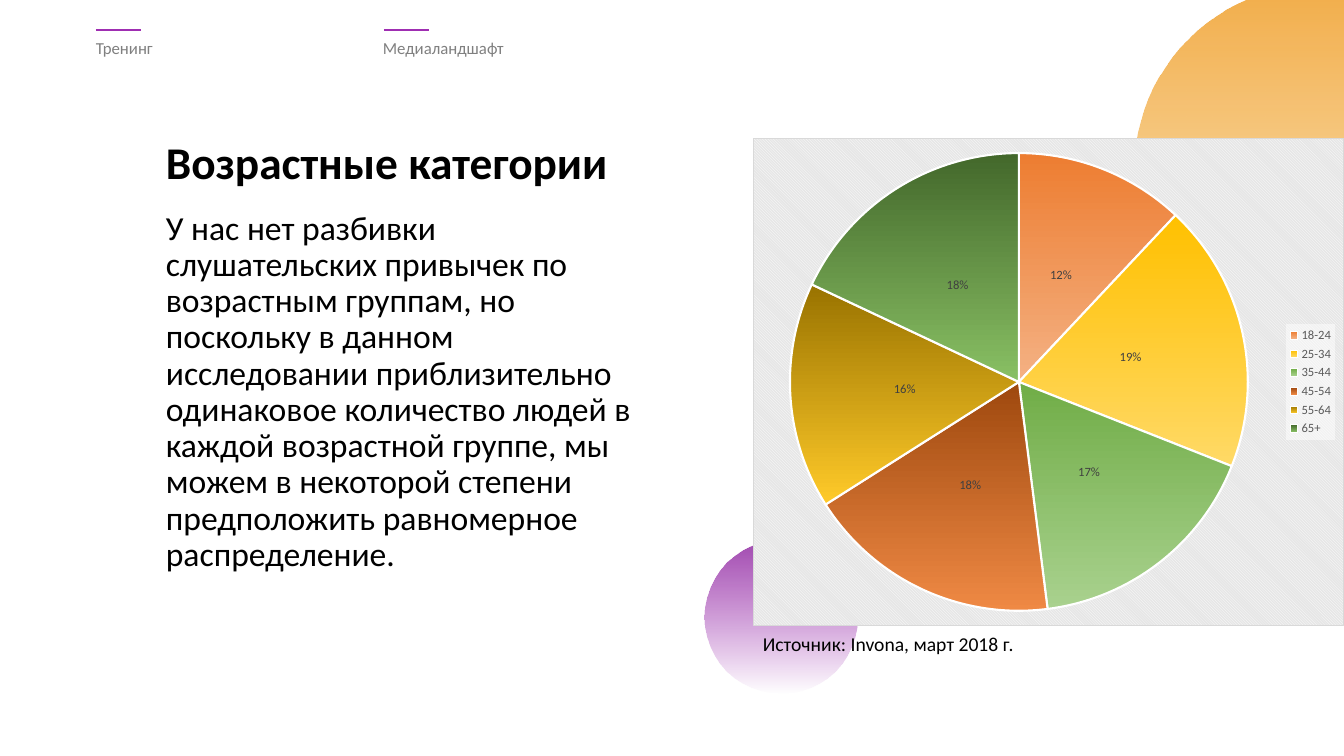
from dataclasses import dataclass

from pptx import Presentation
from pptx.chart.data import CategoryChartData
from pptx.dml.color import RGBColor
from pptx.dml.fill import FillFormat
from pptx.enum.chart import XL_CHART_TYPE, XL_LABEL_POSITION, XL_LEGEND_POSITION
from pptx.enum.shapes import MSO_CONNECTOR, MSO_SHAPE
from pptx.enum.text import MSO_ANCHOR, PP_ALIGN
from pptx.oxml import parse_xml
from pptx.oxml.ns import nsdecls, qn
from pptx.slide import Slide
from pptx.util import Emu, Pt

EMU_PER_PX = 914400 / 100.8
FONT = "Calibri"

BLACK = RGBColor(0x00, 0x00, 0x00)
WHITE = RGBColor(0xFF, 0xFF, 0xFF)
GRAY = RGBColor(0x80, 0x80, 0x80)
LABEL_GRAY = RGBColor(0x40, 0x40, 0x40)
LEGEND_GRAY = RGBColor(0x59, 0x59, 0x59)
PURPLE = RGBColor(0x9F, 0x2E, 0xB2)
SOFT_PURPLE = RGBColor(0xA2, 0x4A, 0xB1)
ORANGE = RGBColor(0xF4, 0xAF, 0x3D)
SOFT_ORANGE = RGBColor(0xF3, 0xAE, 0x49)

PIE = XL_CHART_TYPE.PIE
CENTER_LABEL = XL_LABEL_POSITION.CENTER
RIGHT_LEGEND = XL_LEGEND_POSITION.RIGHT
STRAIGHT = MSO_CONNECTOR.STRAIGHT
OVAL = MSO_SHAPE.OVAL
TOP, MIDDLE = MSO_ANCHOR.TOP, MSO_ANCHOR.MIDDLE
LEFT, JUSTIFY = PP_ALIGN.LEFT, PP_ALIGN.JUSTIFY


@dataclass(frozen=True)
class TextBlock:
    text: str
    box: tuple[int, int, int, int]
    size: float
    color: RGBColor = BLACK
    bold: bool = False
    anchor: MSO_ANCHOR = TOP
    align: PP_ALIGN = LEFT
    line_spacing: float = 0.9


@dataclass(frozen=True)
class Circle:
    left: int
    top: int
    diameter: int
    start: RGBColor
    end: RGBColor
    end_opacity: int


@dataclass(frozen=True)
class AgeGroup:
    name: str
    share: int
    start: RGBColor
    end: RGBColor


TEXT_BLOCKS = [
    TextBlock("Возрастные категории", (156, 134, 487, 61), 32.4, bold=True, anchor=MIDDLE),
    TextBlock(
        "У нас нет разбивки слушательских привычек по возрастным группам, но поскольку "
        "в данном исследовании приблизительно одинаковое количество людей в каждой "
        "возрастной группе, мы можем в некоторой степени предположить равномерное "
        "распределение.",
        (156, 206, 487, 420), 24),
    TextBlock("Тренинг", (86, 35, 255, 56), 12, GRAY, align=JUSTIFY),
    TextBlock("Медиаландшафт", (373, 35, 255, 56), 12, GRAY, align=JUSTIFY),
]
SOURCE_NOTE = TextBlock("Источник: Invona, март 2018 г.", (753, 627, 344, 34), 14, line_spacing=1)

HEADER_LINE_LEFTS = (96, 384)
HEADER_LINE_TOP = 30
HEADER_LINE_WIDTH = 45

CIRCLES = [
    Circle(704, 541, 153, SOFT_PURPLE, PURPLE, 0),
    Circle(1135, -14, 366, SOFT_ORANGE, ORANGE, 26),
]

CHART_BOX = (753, 138, 591, 488)
AGE_GROUPS = [
    AgeGroup("18-24", 12, RGBColor(0xED, 0x7D, 0x31), RGBColor(0xF4, 0xB1, 0x83)),
    AgeGroup("25-34", 19, RGBColor(0xFF, 0xC0, 0x00), RGBColor(0xFF, 0xD9, 0x66)),
    AgeGroup("35-44", 17, RGBColor(0x70, 0xAD, 0x47), RGBColor(0xA9, 0xD1, 0x8E)),
    AgeGroup("45-54", 18, RGBColor(0x9E, 0x48, 0x0E), RGBColor(0xEF, 0x89, 0x44)),
    AgeGroup("55-64", 16, RGBColor(0x99, 0x73, 0x00), RGBColor(0xFF, 0xCA, 0x29)),
    AgeGroup("65+", 18, RGBColor(0x43, 0x68, 0x2B), RGBColor(0x89, 0xC0, 0x64)),
]

CHART_BACKGROUND = f"""<c:spPr {nsdecls("c", "a")}>
  <a:pattFill prst="dkDnDiag">
    <a:fgClr><a:srgbClr val="FFFFFF"/></a:fgClr><a:bgClr><a:srgbClr val="E6E6E6"/></a:bgClr>
  </a:pattFill>
  <a:ln w="9525"><a:solidFill><a:srgbClr val="D9D9D9"/></a:solidFill></a:ln>
</c:spPr>"""
LEGEND_BACKGROUND = f"""<c:spPr {nsdecls("c", "a")}>
  <a:solidFill><a:srgbClr val="FFFFFF"><a:alpha val="50000"/></a:srgbClr></a:solidFill>
</c:spPr>"""
PLOT_LAYOUT = f"""<c:layout {nsdecls("c")}><c:manualLayout>
  <c:layoutTarget val="inner"/><c:xMode val="edge"/><c:yMode val="edge"/>
  <c:x val="0.06"/><c:y val="0.03"/><c:w val="0.78"/><c:h val="0.94"/>
</c:manualLayout></c:layout>"""


def px(length: int) -> Emu:
    return Emu(round(length * EMU_PER_PX))


def set_vertical_gradient(fill: FillFormat, start: RGBColor, end: RGBColor) -> None:
    fill.gradient()
    fill.gradient_angle = 270
    for stop, color, position in zip(fill.gradient_stops, (start, end), (0, 1)):
        stop.color.rgb = color
        stop.position = position


def add_text(slide: Slide, block: TextBlock) -> None:
    frame = slide.shapes.add_textbox(*map(px, block.box)).text_frame
    frame.word_wrap = True
    frame.vertical_anchor = block.anchor
    paragraph = frame.paragraphs[0]
    paragraph.alignment = block.align
    paragraph.line_spacing = block.line_spacing
    run = paragraph.add_run()
    run.text = block.text
    run.font.name = FONT
    run.font.size = Pt(block.size)
    run.font.bold = block.bold
    run.font.color.rgb = block.color


def add_header_line(slide: Slide, left: int) -> None:
    top = px(HEADER_LINE_TOP)
    line = slide.shapes.add_connector(STRAIGHT, px(left), top, px(left + HEADER_LINE_WIDTH), top)
    line.line.color.rgb = PURPLE
    line.line.width = Pt(1.25)
    line.element.spPr.append(parse_xml(f'<a:effectLst {nsdecls("a")}/>'))


def add_circle(slide: Slide, circle: Circle) -> None:
    diameter = px(circle.diameter)
    shape = slide.shapes.add_shape(OVAL, px(circle.left), px(circle.top), diameter, diameter)
    shape.shadow.inherit = False
    shape.line.fill.background()
    set_vertical_gradient(shape.fill, circle.start, circle.end)
    end_color = list(shape.element.spPr.iter(qn("a:srgbClr")))[-1]
    alpha = f'<a:alpha {nsdecls("a")} val="{circle.end_opacity * 1000}"/>'
    end_color.append(parse_xml(alpha))


def add_age_chart(slide: Slide) -> None:
    data = CategoryChartData()
    data.categories = [group.name for group in AGE_GROUPS]
    data.add_series("Series 1", [group.share for group in AGE_GROUPS])
    chart = slide.shapes.add_chart(PIE, *map(px, CHART_BOX), data).chart
    chart.has_title = False
    chart.font.name = FONT
    chart.font.size = Pt(10)
    chart.font.color.rgb = BLACK

    chart.has_legend = True
    legend = chart.legend
    legend.position = RIGHT_LEGEND
    legend.include_in_layout = False
    legend.font.name = FONT
    legend.font.size = Pt(9)
    legend.font.color.rgb = LEGEND_GRAY

    plot = chart.plots[0]
    plot.vary_by_categories = True
    for index, group in enumerate(AGE_GROUPS):
        slice_format = plot.series[0].points[index].format
        set_vertical_gradient(slice_format.fill, group.start, group.end)
        slice_format.line.color.rgb = WHITE
        slice_format.line.width = Pt(1.5)

    labels = plot.series[0].data_labels
    labels.show_percentage = True
    labels.show_value = False
    labels.number_format = "0%"
    labels.number_format_is_linked = False
    labels.position = CENTER_LABEL
    labels.font.name = FONT
    labels.font.size = Pt(9)
    labels.font.color.rgb = LABEL_GRAY

    chart_element = chart.element.find(qn("c:chart"))
    chart_element.addnext(parse_xml(CHART_BACKGROUND))
    legend_overlay = chart_element.find(f'{qn("c:legend")}/{qn("c:overlay")}')
    legend_overlay.addnext(parse_xml(LEGEND_BACKGROUND))
    plot_area = chart_element.find(qn("c:plotArea"))
    for layout in plot_area.findall(qn("c:layout")):
        plot_area.remove(layout)
    plot_area.insert(0, parse_xml(PLOT_LAYOUT))


def main() -> None:
    presentation = Presentation()
    presentation.slide_width, presentation.slide_height = px(1344), px(756)
    slide = presentation.slides.add_slide(presentation.slide_layouts[6])
    for block in TEXT_BLOCKS:
        add_text(slide, block)
    for left in HEADER_LINE_LEFTS:
        add_header_line(slide, left)
    for circle in CIRCLES:
        add_circle(slide, circle)
    add_age_chart(slide)
    add_text(slide, SOURCE_NOTE)
    presentation.save("out.pptx")


if __name__ == "__main__":
    main()
